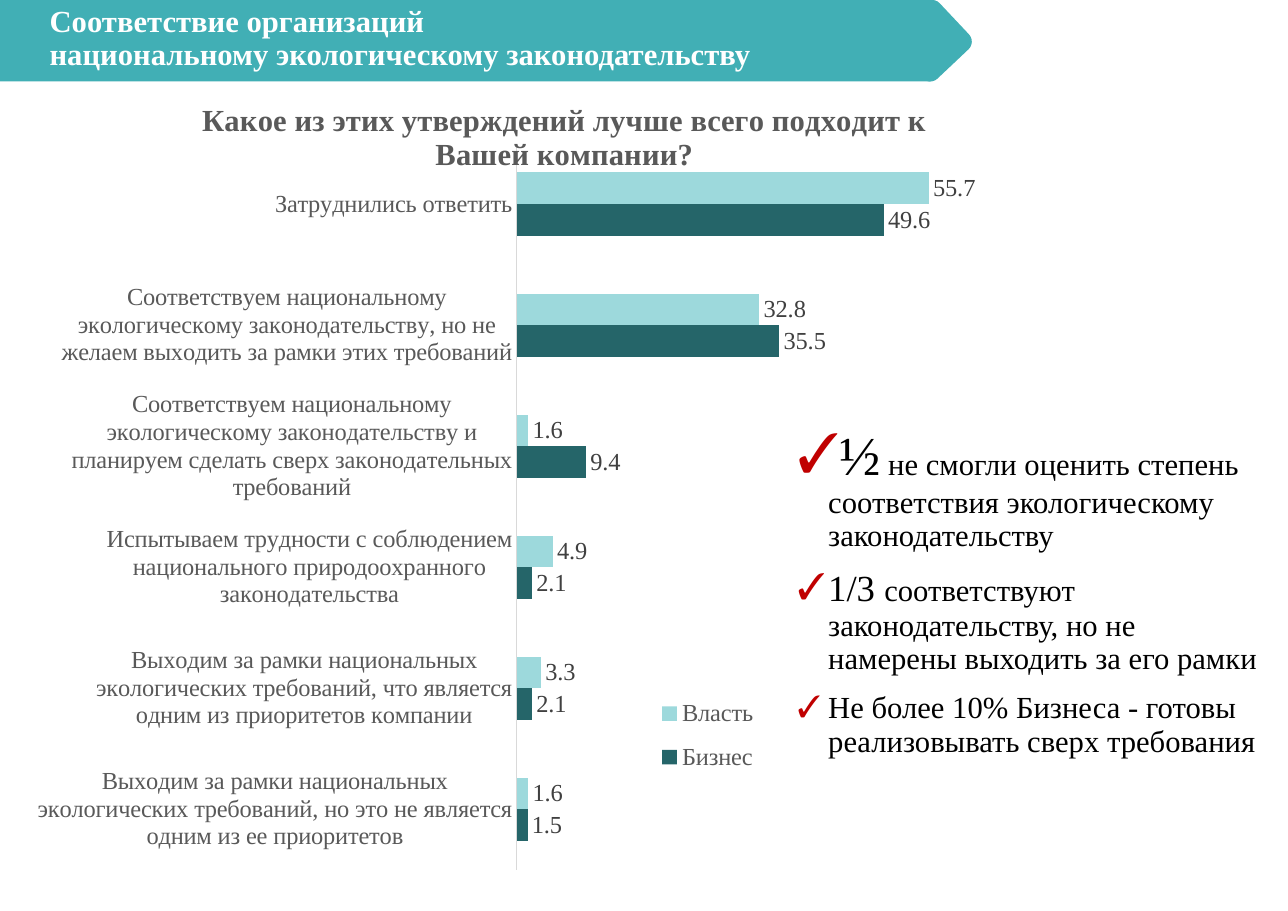
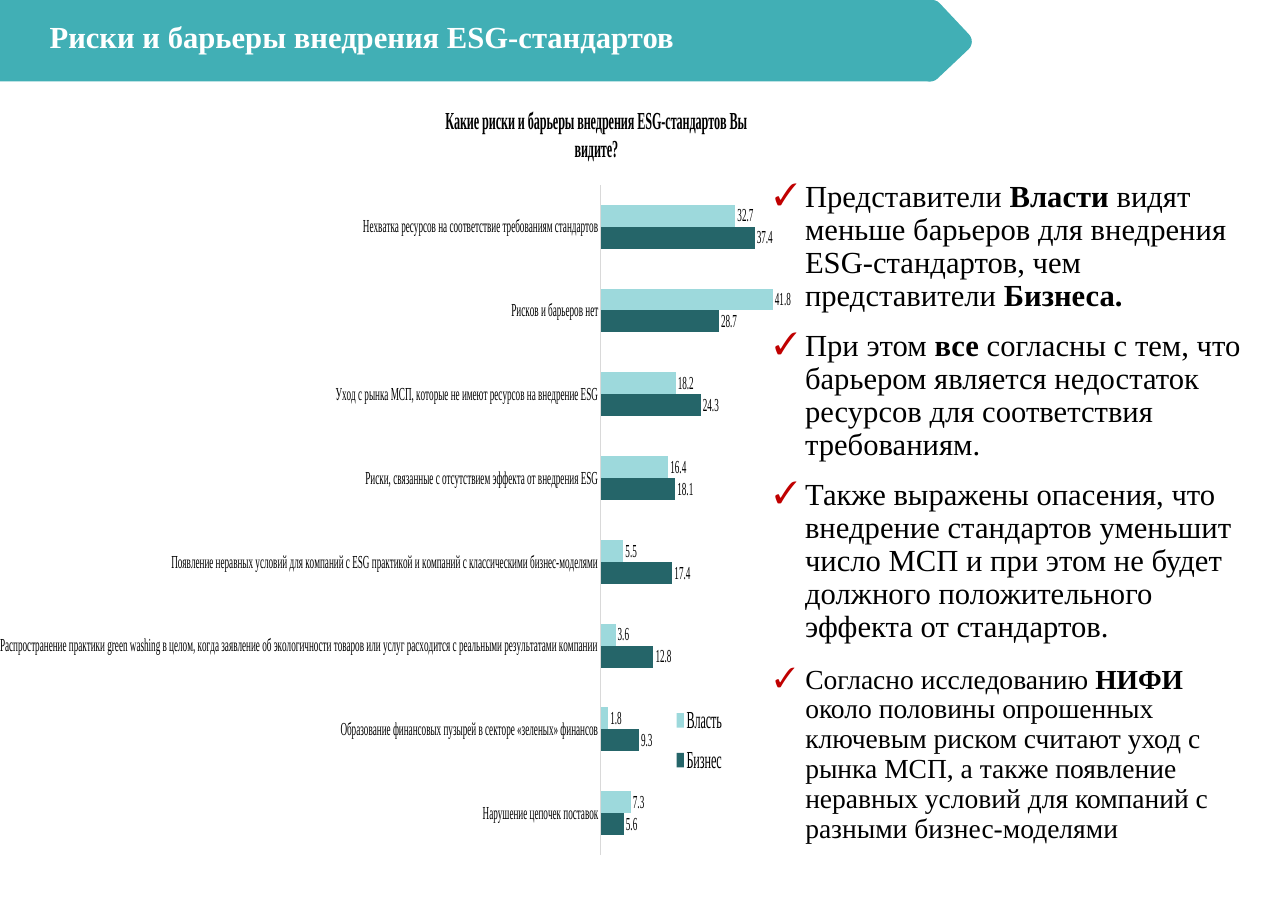
import pptx
import pptx.chart.data
import pptx.dml.color
import pptx.enum.chart
import pptx.enum.shapes
import pptx.enum.text
import pptx.oxml
import pptx.oxml.ns
import pptx.util

Pt = pptx.util.Pt
RGB = pptx.dml.color.RGBColor
qn = pptx.oxml.ns.qn
nsdecls = pptx.oxml.ns.nsdecls

TEAL = RGB(0x41, 0xAF, 0xB5)
DARK_TEAL = RGB(0x25, 0x65, 0x69)
PALE_TEAL = RGB(0x9D, 0xD9, 0xDC)
WHITE = RGB(0xFF, 0xFF, 0xFF)
BLACK = RGB(0, 0, 0)
GREY = RGB(0x59, 0x59, 0x59)
LABEL_GREY = RGB(0x40, 0x40, 0x40)
AXIS_GREY = RGB(0xD9, 0xD9, 0xD9)
CHECK_RED = RGB(0xC0, 0, 0)
FONT = "Times New Roman"

# Paragraphs are lists of runs: (text, size, bold)
SLIDES = [
    dict(
        title=["Соответствие организаций", "национальному экологическому законодательству"],
        question="Какое из этих утверждений лучше всего подходит к Вашей компании?",
        question_size=20, question_at=(0.167, 0.011), text_color=GREY,
        label_size=16, label_color=LABEL_GREY, wrap_cats=True,
        chart_box=(24.5, 56.2, 616.3, 517), plot=(0.507, 0.073, 0.472, 0.918),
        legend=(0.65, 0.756, 0.12, 0.13), axis_max=60,
        cats=[
            "Выходим за рамки национальных экологических требований, но это не является одним из ее приоритетов",
            "Выходим за рамки национальных экологических требований, что является одним из приоритетов компании",
            "Испытываем трудности с соблюдением национального природоохранного законодательства",
            "Соответствуем национальному экологическому законодательству и планируем сделать сверх законодательных требований",
            "Соответствуем национальному экологическому законодательству, но не желаем выходить за рамки этих требований",
            "Затруднились ответить",
        ],
        business=[1.5, 2.1, 2.1, 9.4, 35.5, 49.6],
        power=[1.6, 3.3, 4.9, 1.6, 32.8, 55.7],
        body_box=(514, 275.8, 318.2, 272),
        body=[
            [("½", 36, False),
             (" не смогли оценить степень соответствия экологическому законодательству", 20, False)],
            [("1/3 ", 24, False),
             ("соответствуют законодательству, но не намерены выходить за его рамки", 20, False)],
            [("Не более 10% Бизнеса - готовы реализовывать сверх требования", 20, False)],
        ],
    ),
    dict(
        title=["Риски и барьеры внедрения ESG-стандартов"],
        question="Какие риски и барьеры внедрения ESG-стандартов Вы видите?",
        question_size=16, question_at=None, text_color=BLACK,
        label_size=12, label_color=BLACK, wrap_cats=False,
        chart_box=(0, 51.1, 519.1, 544.3), plot=(0.511, 0.128, 0.468, 0.805),
        legend=(0.69, 0.74, 0.14, 0.11), axis_max=45,
        cats=[
            "Нарушение цепочек поставок",
            "Образование финансовых пузырей в секторе «зеленых» финансов",
            "Распространение практики green washing в целом, когда заявление об экологичности "
            "товаров или услуг расходится с реальными результатами компании",
            "Появление неравных условий для компаний с ESG практикой и компаний с классическими бизнес-моделями",
            "Риски, связанные с отсутствием эффекта от внедрения ESG",
            "Уход с рынка МСП, которые не имеют ресурсов на внедрение ESG",
            "Рисков и барьеров нет",
            "Нехватка ресурсов на соответствие требованиям стандартов",
        ],
        business=[5.6, 9.3, 12.8, 17.4, 18.1, 24.3, 28.7, 37.4],
        power=[7.3, 1.8, 3.6, 5.5, 16.4, 18.2, 41.8, 32.7],
        body_box=(499, 431.3, 314.6, 147.6),
        body=[
            [("Согласно исследованию ", 18, False), ("НИФИ", 18, True),
             (" около половины опрошенных ключевым риском считают уход с рынка МСП, а также "
              "появление неравных условий для компаний с разными бизнес-моделями", 18, False)],
        ],
        note_box=(499, 114.5, 336.2, 316.8),
        note=[
            [("Представители ", 20, False), ("Власти", 20, True),
             (" видят меньше барьеров для внедрения ESG-стандартов, чем представители ", 20, False),
             ("Бизнеса.", 20, True)],
            [("При этом ", 20, False), ("все ", 20, True),
             ("согласны с тем, что барьером является недостаток ресурсов для соответствия "
              "требованиям.", 20, False)],
            [("Также выражены опасения, что внедрение стандартов уменьшит число МСП и при этом "
              "не будет должного положительного эффекта от стандартов.", 20, False)],
        ],
    ),
]


def set_layout(parent, x, y, w=None, h=None, inner=False):
    """Give a chart part a manual layout in fractions of the chart."""
    for old in parent.findall(qn("c:layout")):
        parent.remove(old)
    target = '<c:layoutTarget val="inner"/>' if inner else ""
    size = f'<c:w val="{w}"/><c:h val="{h}"/>' if w else ""
    layout = pptx.oxml.parse_xml(
        f'<c:layout {nsdecls("c")}><c:manualLayout>{target}<c:xMode val="edge"/>'
        f'<c:yMode val="edge"/><c:x val="{x}"/><c:y val="{y}"/>{size}</c:manualLayout></c:layout>')
    overlay = parent.find(qn("c:overlay"))
    if overlay is None:
        parent.insert(0, layout)
    else:
        overlay.addprevious(layout)


def fill_checklist(sp, box, paragraphs):
    sp.left, sp.top, sp.width, sp.height = map(Pt, box)
    tf = sp.text_frame
    tf.word_wrap = True
    tf.auto_size = pptx.enum.text.MSO_AUTO_SIZE.NONE
    tf.vertical_anchor = pptx.enum.text.MSO_ANCHOR.TOP
    for i, runs in enumerate(paragraphs):
        p = tf.add_paragraph() if i else tf.paragraphs[0]
        pPr = p._p.get_or_add_pPr()
        pPr.set("marL", str(Pt(20)))
        pPr.set("indent", str(Pt(-20)))
        for bullet in (f'<a:buClr {nsdecls("a")}><a:srgbClr val="{CHECK_RED}"/></a:buClr>',
                       f'<a:buFont {nsdecls("a")} typeface="{FONT}"/>',
                       f'<a:buChar {nsdecls("a")} char="✓"/>'):
            pPr.append(pptx.oxml.parse_xml(bullet))
        p.line_spacing = 0.9
        p.space_before = Pt(11 if i else 0)
        for text, size, bold in runs:
            r = p.add_run()
            r.text = text
            r.font.name, r.font.size, r.font.bold = FONT, Pt(size), bold
            r.font.color.rgb = BLACK


prs = pptx.Presentation()
prs.slide_width, prs.slide_height = Pt(841.7), Pt(595.4)
layout = prs.slide_layouts[1]
slides = [prs.slides.add_slide(layout) for _ in SLIDES]

# The header band is drawn on a slide, then moved to the master
MSO_SHAPE = pptx.enum.shapes.MSO_SHAPE
master_tree = prs.slide_master.element.cSld.spTree
for kind, box, angle in ((MSO_SHAPE.RECTANGLE, (0, 0, 608.4, 53.2), 0),
                         (MSO_SHAPE.ROUNDED_RECTANGLE, (587.5, 5.7, 41.8, 41.8), 46.7)):
    sp = slides[0].shapes.add_shape(kind, *map(Pt, box))
    sp.rotation = angle
    sp.shadow.inherit = False
    sp.fill.solid()
    sp.fill.fore_color.rgb = TEAL
    sp.line.fill.background()
    master_tree.insert(2, sp.element)

for s, d in zip(slides, SLIDES):
    # Title
    sp = s.shapes.title
    sp.left, sp.top, sp.width, sp.height = map(Pt, (25.2, 1.5, 556, 47.5))
    tf = sp.text_frame
    tf.word_wrap = True
    tf.auto_size = pptx.enum.text.MSO_AUTO_SIZE.NONE
    tf.vertical_anchor = pptx.enum.text.MSO_ANCHOR.MIDDLE
    p = tf.paragraphs[0]
    p.alignment = pptx.enum.text.PP_ALIGN.LEFT
    p.line_spacing = 0.9
    for i, line in enumerate(d["title"]):
        if i:
            p.add_line_break()
        r = p.add_run()
        r.text = line
        r.font.name, r.font.size, r.font.bold = FONT, Pt(20), True
        r.font.color.rgb = WHITE

    # Chart, behind the text
    data = pptx.chart.data.CategoryChartData(number_format="0.0")
    data.categories = d["cats"]
    data.add_series("Бизнес", d["business"])
    data.add_series("Власть", d["power"])
    frame = s.shapes.add_chart(pptx.enum.chart.XL_CHART_TYPE.BAR_CLUSTERED,
                               *map(Pt, d["chart_box"]), data)
    s.shapes.element.insert(2, frame.element)
    chart = frame.chart
    chart.font.name, chart.font.size = FONT, Pt(d["label_size"])
    chart.font.color.rgb = BLACK
    chart.element.find(qn("c:txPr")).addprevious(pptx.oxml.parse_xml(
        f'<c:spPr {nsdecls("c", "a")}><a:noFill/><a:ln><a:noFill/></a:ln></c:spPr>'))
    set_layout(chart.element.chart.plotArea, *d["plot"], inner=True)

    chart.has_title = True
    r = chart.chart_title.text_frame.paragraphs[0].add_run()
    r.text = d["question"]
    r.font.name, r.font.size, r.font.bold = FONT, Pt(d["question_size"]), True
    r.font.color.rgb = d["text_color"]
    if d["question_at"]:
        set_layout(chart.chart_title.element, *d["question_at"])

    chart.has_legend = True
    legend = chart.legend
    legend.position = pptx.enum.chart.XL_LEGEND_POSITION.BOTTOM
    legend.include_in_layout = False
    legend.font.name, legend.font.size = FONT, Pt(16)
    legend.font.color.rgb = d["text_color"]
    set_layout(chart.element.find(".//" + qn("c:legend")), *d["legend"])

    axis = chart.category_axis
    axis.major_tick_mark = axis.minor_tick_mark = pptx.enum.chart.XL_TICK_MARK.NONE
    axis.format.line.color.rgb = AXIS_GREY
    axis.format.line.width = Pt(0.75)
    if d["wrap_cats"]:  # axis-level text properties make long labels wrap
        font = axis.tick_labels.font
        font.name, font.size = FONT, Pt(d["label_size"])
        font.color.rgb = d["text_color"]
    axis = chart.value_axis
    axis.visible = False
    axis.has_major_gridlines = False
    axis.minimum_scale, axis.maximum_scale = 0, d["axis_max"]

    plot = chart.plots[0]
    plot.gap_width, plot.overlap = 182, 0
    plot.vary_by_categories = False
    for series, color in zip(plot.series, (DARK_TEAL, PALE_TEAL)):
        series.format.fill.solid()
        series.format.fill.fore_color.rgb = color
        labels = series.data_labels
        labels.show_value = True
        labels.number_format, labels.number_format_is_linked = "0.0", False
        labels.position = pptx.enum.chart.XL_LABEL_POSITION.OUTSIDE_END
        labels.font.name, labels.font.size = FONT, Pt(d["label_size"])
        labels.font.color.rgb = d["label_color"]

    # Findings
    fill_checklist(s.placeholders[1], d["body_box"], d["body"])
    if "note" in d:
        fill_checklist(s.shapes.add_textbox(0, 0, 0, 0), d["note_box"], d["note"])

prs.save("out.pptx")
